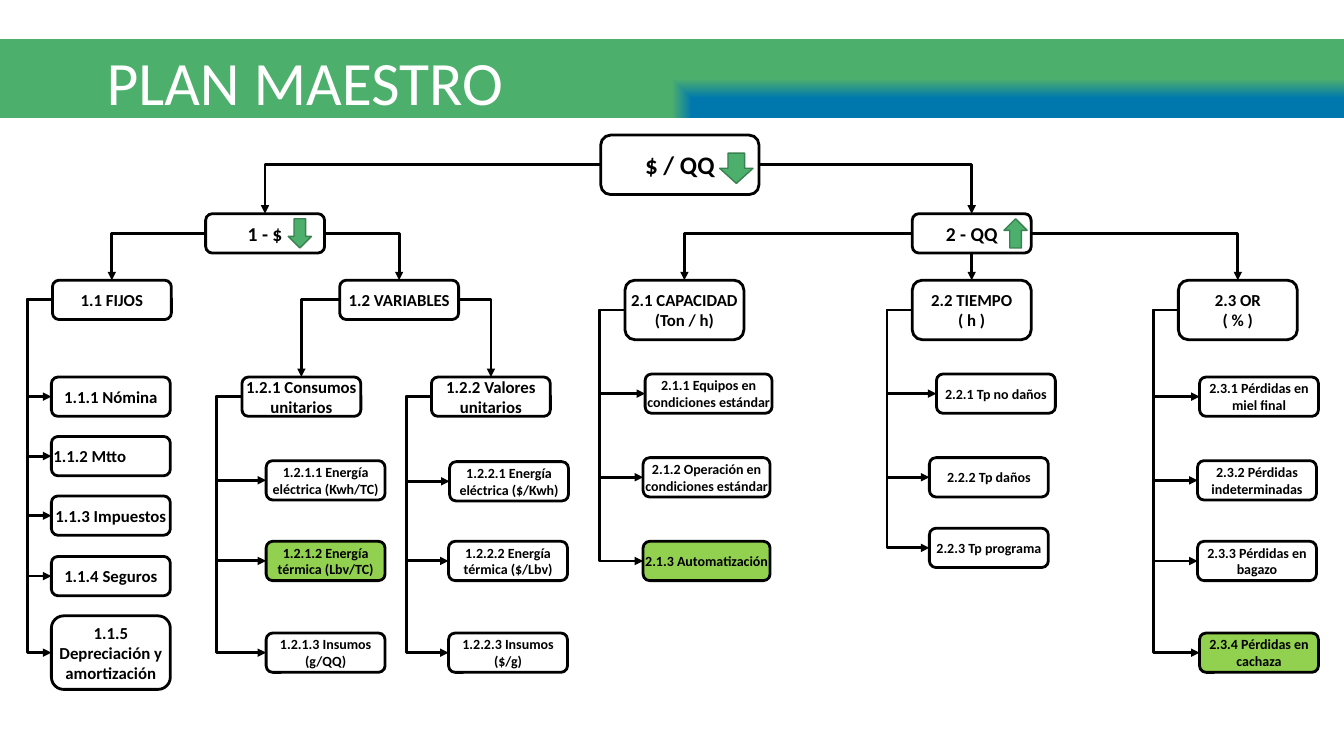
from dataclasses import dataclass
from lxml import etree
from pptx import Presentation
from pptx.dml.color import RGBColor
from pptx.enum.shapes import MSO_CONNECTOR, MSO_SHAPE
from pptx.enum.text import MSO_ANCHOR, PP_ALIGN
from pptx.oxml import parse_xml
from pptx.oxml.ns import nsdecls, qn
from pptx.util import Inches, Pt

RECTANGLE = MSO_SHAPE.RECTANGLE
ROUNDED = MSO_SHAPE.ROUNDED_RECTANGLE
DOWN = MSO_SHAPE.DOWN_ARROW
UP = MSO_SHAPE.UP_ARROW
STRAIGHT = MSO_CONNECTOR.STRAIGHT
ELBOW = MSO_CONNECTOR.ELBOW
MIDDLE = MSO_ANCHOR.MIDDLE
CENTER = PP_ALIGN.CENTER
LEFT = PP_ALIGN.LEFT
BOTTOM_SIDE, TOP_SIDE = 2, 0

COLUMNS, ROWS = 133.33, 75
BOX_WIDTH, BOX_HEIGHT = 11.8, 3.9
TRUNK_GAP = 2.5


@dataclass(frozen=True)
class Theme:
    font: str = "Calibri"
    ink: str = "000000"
    white: str = "FFFFFF"
    green: str = "4DAF6C"
    green_edge: str = "398150"
    blue: str = "0078AE"
    highlight: str = "92D050"
    title: int = 44
    root: int = 18
    goal: int = 14
    topic: int = 12
    detail: int = 10
    stroke: int = 2
    thin: int = 1


THEME = Theme()


@dataclass(frozen=True)
class Node:
    text: str
    column: float
    row: float
    size: int = THEME.detail
    width: float = BOX_WIDTH
    height: float = BOX_HEIGHT
    inset: float = 0
    align: PP_ALIGN = CENTER
    highlighted: bool = False
    trunk: bool = False
    children: tuple = ()

    @property
    def center(self):
        return self.column + self.width / 2

    @property
    def middle(self):
        return self.row + self.height / 2


def plan():
    fixed = Node("1.1 FIJOS", 5.2, 27.8, THEME.topic, trunk=True, children=(
        Node("1.1.1 Nómina", 5.1, 37.4, THEME.topic),
        Node("1.1.2 Mtto", 5.1, 43.3, THEME.topic, align=LEFT),
        Node("1.1.3 Impuestos", 5.1, 49.2, THEME.topic),
        Node("1.1.4 Seguros", 5.1, 55.2, THEME.topic),
        Node("1.1.5 Depreciación y amortización", 5.1, 61.1, THEME.topic, height=7.3),
    ))
    usage = Node("1.2.1 Consumos unitarios", 24, 37.4, THEME.topic, trunk=True, children=(
        Node("1.2.1.1 Energía eléctrica (Kwh/TC)", 26.4, 45.7),
        Node("1.2.1.2 Energía térmica (Lbv/TC)", 26.4, 53.7, highlighted=True),
        Node("1.2.1.3 Insumos (g/QQ)", 26.4, 62.8),
    ))
    prices = Node("1.2.2 Valores unitarios", 42.8, 37.4, THEME.topic, trunk=True, children=(
        Node("1.2.2.1 Energía eléctrica ($/Kwh)", 44.6, 45.8),
        Node("1.2.2.2 Energía térmica ($/Lbv)", 44.5, 53.7),
        Node("1.2.2.3 Insumos ($/g)", 44.5, 62.8),
    ))
    variable = Node("1.2 VARIABLES", 33.7, 27.8, THEME.topic, children=(usage, prices))
    capacity = Node("2.1 CAPACIDAD\n(Ton / h)", 62, 27.8, THEME.topic, height=5.9, trunk=True, children=(
        Node("2.1.1 Equipos en condiciones estándar", 64, 37.1, width=12.6),
        Node("2.1.2 Operación en condiciones estándar", 63.8, 45.4, width=12.6),
        Node("2.1.3 Automatización", 63.8, 53.7, width=12.6, highlighted=True),
    ))
    time = Node("2.2 TIEMPO\n( h )", 90.5, 27.8, THEME.topic, height=5.9, trunk=True, children=(
        Node("2.2.1 Tp no daños", 92.9, 37.1),
        Node("2.2.2 Tp daños", 92.2, 45.4),
        Node("2.2.3 Tp programa", 92.2, 52.4),
    ))
    recovery = Node("2.3 OR\n( % )", 116.9, 27.8, THEME.topic, height=5.9, trunk=True, children=(
        Node("2.3.1 Pérdidas en miel final", 119, 37.4),
        Node("2.3.2 Pérdidas indeterminadas", 118.8, 45.7),
        Node("2.3.3 Pérdidas en bagazo", 118.8, 53.7),
        Node("2.3.4 Pérdidas en cachaza", 119, 62.8, highlighted=True),
    ))
    cost = Node("1 - $", 20.4, 21.2, THEME.goal, inset=1, children=(fixed, variable))
    output = Node("2 - QQ", 90.5, 21.2, THEME.goal, inset=1, children=(capacity, time, recovery))
    return Node("$ / QQ", 59.6, 13.4, THEME.root, 15.7, 5.9, inset=1, children=(cost, output))


def grid(*cells):
    return [Inches(cell / 10) for cell in cells]


def color(value):
    return RGBColor.from_string(value)


def add_text(paragraph, text, size, ink, bold):
    run = paragraph.add_run()
    run.text = text
    run.font.name = THEME.font
    run.font.size = Pt(size)
    run.font.bold = bold
    run.font.color.rgb = color(ink)


def add_banner(slide):
    banner = slide.shapes.add_shape(RECTANGLE, *grid(0, 3.9, COLUMNS, 7.8))
    banner.shadow.inherit = False
    banner.line.fill.background()
    banner.fill.background()
    stops = "".join(
        f'<a:gs pos="{share * 1000}"><a:srgbClr val="{value}"/></a:gs>'
        for share, value in ((0, THEME.blue), (50, THEME.blue), (100, THEME.green))
    )
    gradient = parse_xml(
        f'<a:gradFill {nsdecls("a")} rotWithShape="1"><a:gsLst>{stops}</a:gsLst>'
        '<a:path path="rect"><a:fillToRect l="100000" t="100000"/></a:path>'
        '<a:tileRect r="-100000" b="-100000"/></a:gradFill>'
    )
    properties = banner.element.spPr
    properties.replace(properties.find(qn("a:noFill")), gradient)


def add_title(slide, text):
    title = slide.shapes.add_textbox(*grid(9.6, 3.6, 115, 9.8))
    frame = title.text_frame
    frame.word_wrap = True
    frame.vertical_anchor = MIDDLE
    paragraph = frame.paragraphs[0]
    paragraph.line_spacing = 0.9
    add_text(paragraph, text, THEME.title, THEME.white, False)


def add_box(slide, node):
    box = slide.shapes.add_shape(ROUNDED, *grid(node.column, node.row, node.width, node.height))
    box.shadow.inherit = False
    if node.highlighted:
        box.fill.solid()
        box.fill.fore_color.rgb = color(THEME.highlight)
    else:
        box.fill.background()
    box.line.color.rgb = color(THEME.ink)
    box.line.width = Pt(THEME.stroke)
    frame = box.text_frame
    frame.word_wrap = True
    frame.vertical_anchor = MIDDLE
    frame.margin_left, frame.margin_right = grid(node.inset, node.inset)
    for index, line in enumerate(node.text.split("\n")):
        paragraph = frame.add_paragraph() if index else frame.paragraphs[0]
        paragraph.alignment = node.align
        add_text(paragraph, line, node.size, THEME.ink, True)
    return box


def add_link(slide, kind, *ends):
    link = slide.shapes.add_connector(kind, *grid(*ends))
    link.line.color.rgb = color(THEME.ink)
    link.line.width = Pt(THEME.stroke)
    properties = link.element.spPr
    etree.SubElement(properties.find(qn("a:ln")), qn("a:tailEnd"), type="triangle")
    etree.SubElement(properties, qn("a:effectLst"))
    return link


def link_by_trunk(slide, parent, child):
    link = add_link(slide, ELBOW, parent.column, parent.middle, child.column, child.middle)
    bend = round(-TRUNK_GAP / (child.column - parent.column) * 100000)
    adjustments = link.element.spPr.find(qn("a:prstGeom")).find(qn("a:avLst"))
    etree.SubElement(adjustments, qn("a:gd"), name="adj1", fmla=f"val {bend}")


def link_by_corner(slide, parent, child):
    side = parent.column if child.center < parent.center else parent.column + parent.width
    link = add_link(slide, ELBOW, side, parent.middle, child.center, child.row)
    link.element.spPr.find(qn("a:prstGeom")).set("prst", "bentConnector2")


def link_straight(slide, parent, child, parent_box, child_box):
    link = add_link(slide, STRAIGHT, parent.center, parent.row + parent.height, child.center, child.row)
    link.begin_connect(parent_box, BOTTOM_SIDE)
    link.end_connect(child_box, TOP_SIDE)


def add_branch(slide, node):
    box = add_box(slide, node)
    for child in node.children:
        child_box = add_branch(slide, child)
        if node.trunk:
            link_by_trunk(slide, node, child)
        elif child.center == node.center:
            link_straight(slide, node, child, box, child_box)
        else:
            link_by_corner(slide, node, child)
    return box


def add_trend(slide, direction, *cells):
    arrow = slide.shapes.add_shape(direction, *grid(*cells))
    arrow.shadow.inherit = False
    arrow.fill.solid()
    arrow.fill.fore_color.rgb = color(THEME.green)
    arrow.line.color.rgb = color(THEME.green_edge)
    arrow.line.width = Pt(THEME.thin)


def main():
    presentation = Presentation()
    presentation.slide_width, presentation.slide_height = grid(COLUMNS, ROWS)
    slide = presentation.slides.add_slide(presentation.slide_layouts[6])
    add_banner(slide)
    add_title(slide, "PLAN MAESTRO")
    add_branch(slide, plan())
    add_trend(slide, DOWN, 71.4, 15.2, 3.3, 3)
    add_trend(slide, DOWN, 28.6, 21.7, 2.3, 2.9)
    add_trend(slide, UP, 99.6, 21.7, 2.3, 2.9)
    presentation.save("out.pptx")


if __name__ == "__main__":
    main()
